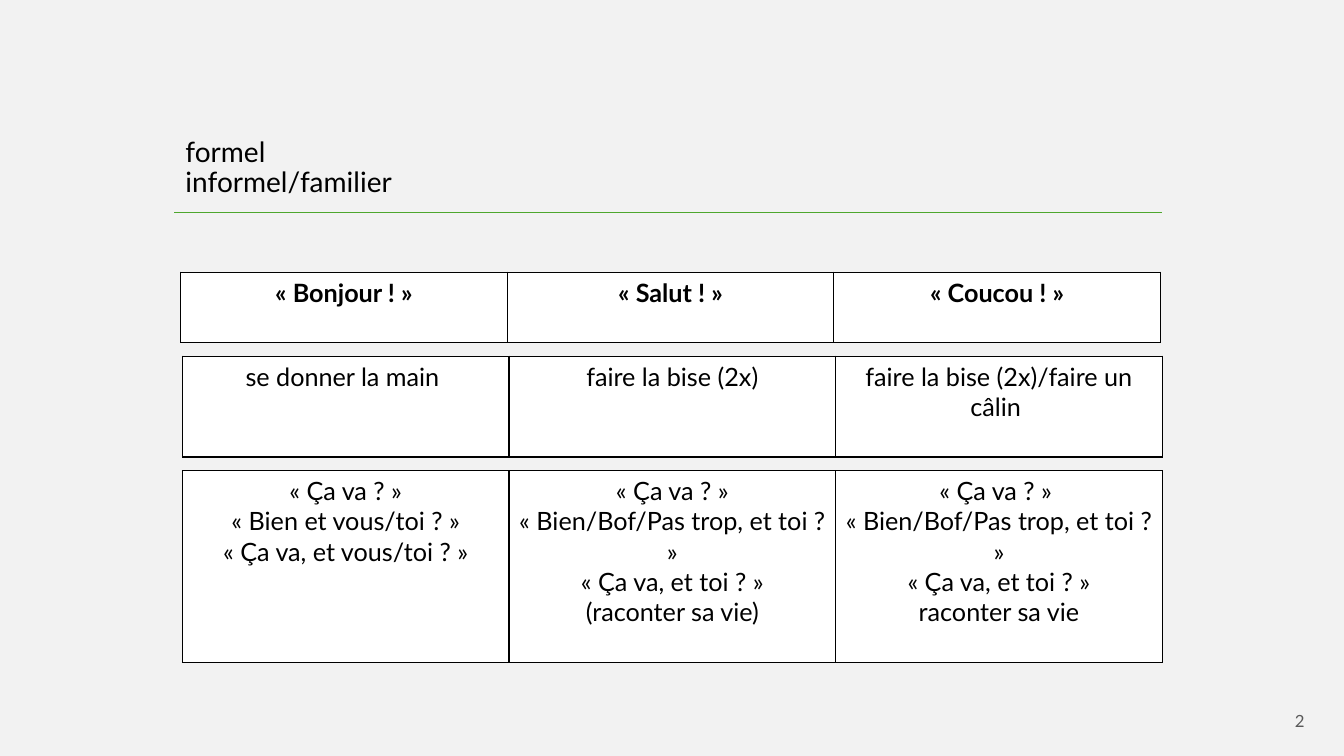
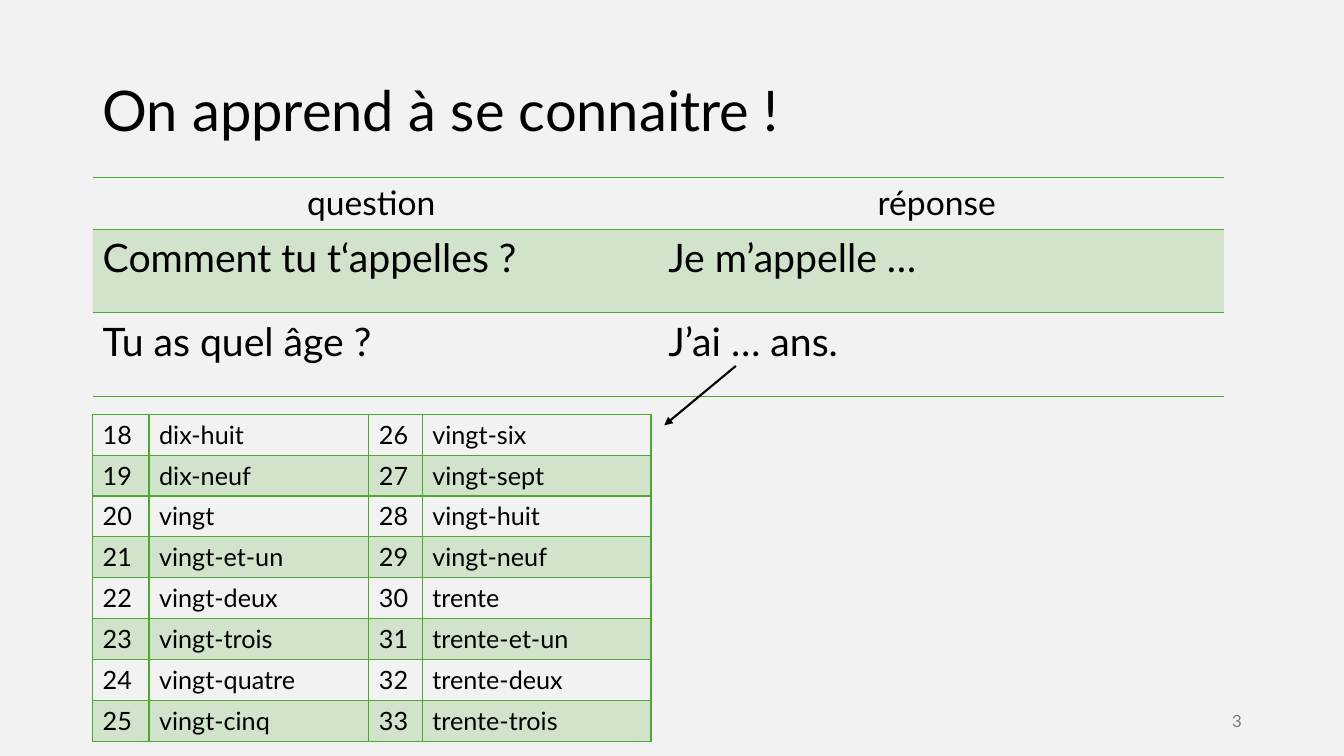
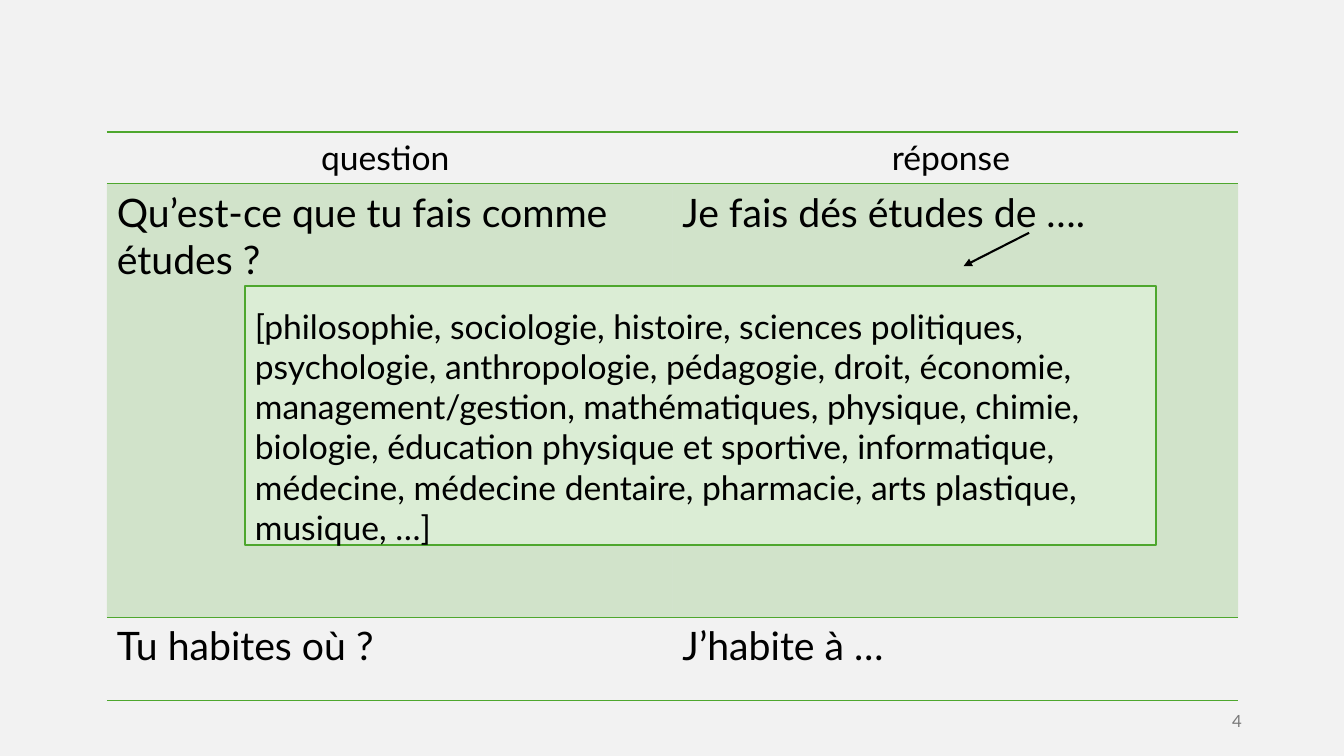
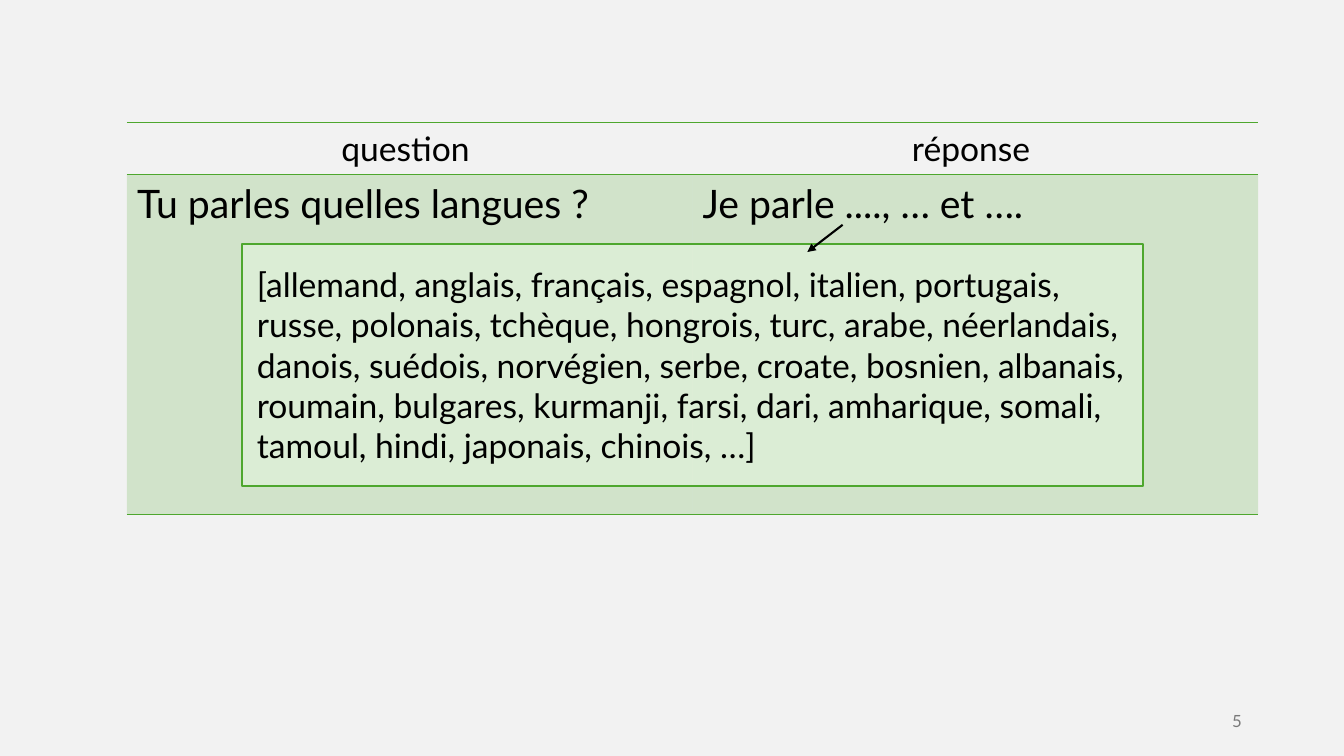
import lxml.etree
import pptx
import pptx.dml.color
import pptx.enum.shapes
import pptx.enum.text
import pptx.oxml.ns
import pptx.util

Pt = pptx.util.Pt
ALIGN = pptx.enum.text.PP_ALIGN
ANCHOR = pptx.enum.text.MSO_ANCHOR
qn = pptx.oxml.ns.qn

# Shared look
FONT = "Lato"
COLORS = {
    "background": "F2F2F2", "text": "000000", "white": "FFFFFF",
    "green": "4EA72E", "number": "797979", "dark_number": "595959",
}
NO_STYLE = "{2D5ABB26-0587-4C30-8999-92F81FD0307C}"
BAND_ALPHA = 20
QUESTION_WIDTHS = [404, 404]
HEADER_HEIGHT = 37

# Content: greetings, as (left, height, bold, cells), stacked downwards
REGISTERS = ["formel", "informel/familier"]
GREETINGS = [
    (129, 50.4, True, [["« Bonjour ! »"], ["« Salut ! »"], ["« Coucou ! »"]]),
    (130.3, 72, False, [["se donner la main "], ["faire la bise (2x)"],
                        ["faire la bise (2x)/faire un câlin "]]),
    (130.3, 137, False, [
        ["« Ça va ? »", "« Bien et vous/toi ? »", "« Ça va, et vous/toi ? »"],
        ["« Ça va ? »", "« Bien/Bof/Pas trop, et toi ? »", "« Ça va, et toi ? »",
         "(raconter sa vie)"],
        ["« Ça va ? » ", "« Bien/Bof/Pas trop, et toi ? »", "« Ça va, et toi ? »",
         "raconter sa vie"],
    ]),
]

# Content: questions, as (question, answer, row height)
HEADER = ("question ", "réponse ")
NAME_AND_AGE = [
    ("Comment tu t‘appelles ?", "Je m’appelle …", 59.8),
    ("Tu as quel âge ?", "J’ai … ans.", 59.8),
]
STUDIES_AND_HOME = [
    ("Qu’est-ce que tu fais comme études ?", "Je fais dés études de ….", 309.5),
    ("Tu habites où ?", "J’habite à …", 59.8),
]
LANGUAGES = [("Tu parles quelles langues ?", "Je parle ...., … et ….", 242.7)]

FIRST_NUMBER = 18
NUMBERS = [
    "dix-huit", "dix-neuf", "vingt", "vingt-et-un", "vingt-deux", "vingt-trois",
    "vingt-quatre", "vingt-cinq", "vingt-six", "vingt-sept", "vingt-huit",
    "vingt-neuf", "trente", "trente-et-un", "trente-deux", "trente-trois",
]
STUDY_WORDS = (
    "[philosophie, sociologie, histoire, sciences politiques, psychologie, "
    "anthropologie, pédagogie, droit, économie, management/gestion, mathématiques, "
    "physique, chimie, biologie, éducation physique et sportive, informatique, "
    "médecine, médecine dentaire, pharmacie, arts plastique, musique, …]"
)
LANGUAGE_WORDS = (
    "[allemand, anglais, français, espagnol, italien, portugais, russe, polonais, "
    "tchèque, hongrois, turc, arabe, néerlandais, danois, suédois, norvégien, serbe, "
    "croate, bosnien, albanais, roumain, bulgares, kurmanji, farsi, dari, amharique, "
    "somali, tamoul, hindi, japonais, chinois, …]"
)


# Text and drawing helpers
def rgb(name):
    return pptx.dml.color.RGBColor.from_string(COLORS[name])


def add_run(paragraph, text, size, color="text", bold=False):
    run = paragraph.add_run()
    run.text = text
    run.font.name = FONT
    run.font.size = Pt(size)
    run.font.bold = bold
    run.font.color.rgb = rgb(color)


def write_lines(frame, lines, size, align=ALIGN.LEFT, color="text", bold=False):
    for index, line in enumerate(lines):
        paragraph = frame.add_paragraph() if index else frame.paragraphs[0]
        paragraph.alignment = align
        add_run(paragraph, line, size, color, bold)


def place(shape, left, top, width, height):
    shape.left, shape.top = Pt(left), Pt(top)
    shape.width, shape.height = Pt(width), Pt(height)


def add_text(slide, box, lines, size, **style):
    frame = slide.shapes.add_textbox(*map(Pt, box)).text_frame
    frame.word_wrap = True
    write_lines(frame, lines, size, **style)
    return frame


def add_number(slide, number, left=678.2, color="number"):
    frame = add_text(slide, (left, 500.4, 216, 28.8), [str(number)], 12,
                     align=ALIGN.RIGHT, color=color)
    frame.vertical_anchor = ANCHOR.MIDDLE


def add_line(slide, start, end, color, width, arrow=False):
    line = slide.shapes.add_connector(
        pptx.enum.shapes.MSO_CONNECTOR.STRAIGHT, *map(Pt, start + end))
    line.line.color.rgb = rgb(color)
    line.line.width = Pt(width)
    properties = line._element.spPr
    if arrow:
        outline = properties.find(qn("a:ln"))
        lxml.etree.SubElement(outline, qn("a:tailEnd"), type="triangle")
    lxml.etree.SubElement(properties, qn("a:effectLst"))


def add_word_frame(slide, box):
    shape = slide.shapes.add_shape(
        pptx.enum.shapes.MSO_SHAPE.RECTANGLE, *map(Pt, box))
    shape.shadow.inherit = False
    shape.fill.solid()
    shape.fill.fore_color.rgb = rgb("white")
    shape.line.color.rgb = rgb("green")
    shape.line.width = Pt(1.5)


# Table helpers
def add_table(slide, left, top, widths, heights):
    table = slide.shapes.add_table(
        len(heights), len(widths), Pt(left), Pt(top),
        Pt(sum(widths)), Pt(sum(heights))).table
    table.first_row = table.horz_banding = False
    table._tbl.tblPr.find(qn("a:tableStyleId")).text = NO_STYLE
    for column, width in zip(table.columns, widths):
        column.width = Pt(width)
    for row, height in zip(table.rows, heights):
        row.height = Pt(height)
    return table


def set_borders(cell, sides, color):
    properties = cell._tc.get_or_add_tcPr()
    for index, side in enumerate(sides):
        border = lxml.etree.Element(qn("a:ln" + side), w=str(Pt(1)))
        fill = lxml.etree.SubElement(border, qn("a:solidFill"))
        lxml.etree.SubElement(fill, qn("a:srgbClr"), val=COLORS[color])
        properties.insert(index, border)


def fill_cell(cell, color, alpha=None):
    cell.fill.solid()
    cell.fill.fore_color.rgb = rgb(color)
    if alpha:
        tint = cell._tc.tcPr.find(".//" + qn("a:solidFill") + "[last()]")
        tint = cell._tc.tcPr.find(qn("a:solidFill")).find(qn("a:srgbClr"))
        lxml.etree.SubElement(tint, qn("a:alpha"), val=str(alpha * 1000))


def fill_band(cell, row):
    if row % 2:
        fill_cell(cell, "green", BAND_ALPHA)
    else:
        cell.fill.background()


def add_questions(slide, left, top, questions):
    heights = [HEADER_HEIGHT] + [height for _, _, height in questions]
    rows = [HEADER] + [(question, answer) for question, answer, _ in questions]
    table = add_table(slide, left, top, QUESTION_WIDTHS, heights)
    for row, texts in enumerate(rows):
        # Rules above and below the header, and under the last row
        sides = "TB" if row == 0 else "T" if row == 1 else ""
        if row == len(rows) - 1:
            sides += "B"
        for column, text in enumerate(texts):
            cell = table.cell(row, column)
            write_lines(cell.text_frame, [text], 28 if row else 24,
                        ALIGN.LEFT if row else ALIGN.CENTER)
            set_borders(cell, sides, "green")
            fill_band(cell, row)


# Slides
def build_greetings(presentation):
    slide = presentation.slides.add_slide(presentation.slide_layouts[1])
    title, body = slide.placeholders
    title._element.getparent().remove(title._element)
    place(body, 125.3, 95, 705.6, 249.8)
    body.text_frame.auto_size = pptx.enum.text.MSO_AUTO_SIZE.NONE
    paragraph = body.text_frame.paragraphs[0]
    paragraph.line_spacing = 0.9
    paragraph.space_before = Pt(10)
    properties = paragraph._p.get_or_add_pPr()
    properties.set("marL", "0")
    properties.set("indent", "0")
    lxml.etree.SubElement(properties, qn("a:buNone"))
    for index, register in enumerate(REGISTERS):
        if index:
            paragraph.add_line_break()
        add_run(paragraph, register, 20)

    add_number(slide, 2, left=722.9, color="dark_number")
    add_line(slide, (124.6, 151.9), (830.2, 151.9), "green", 1)
    top, gap = 194.4, 9.7
    for left, height, bold, cells in GREETINGS:
        table = add_table(slide, left, top, [233.3] * len(cells), [height])
        for column, lines in enumerate(cells):
            cell = table.cell(0, column)
            write_lines(cell.text_frame, lines, 18, ALIGN.CENTER, bold=bold)
            set_borders(cell, "LRTB", "text")
            fill_cell(cell, "white")
        top += height + gap


def build_name_and_age(presentation):
    slide = presentation.slides.add_slide(presentation.slide_layouts[5])
    title = slide.shapes.title
    place(title, 66.2, 28.8, 828, 104.4)
    title.text_frame.auto_size = pptx.enum.text.MSO_AUTO_SIZE.NONE
    title.text_frame.vertical_anchor = ANCHOR.MIDDLE
    write_lines(title.text_frame, ["On apprend à se connaitre !"], 40)
    title.text_frame.paragraphs[0].line_spacing = 0.9

    add_questions(slide, 66.2, 126.7, NAME_AND_AGE)
    add_number(slide, 3)
    # Numbers run down the left pair of columns, then the right pair
    row_count = len(NUMBERS) // 2
    table = add_table(slide, 66.2, 295.9, [40.3, 157, 38.2, 163.4],
                      [29.2] * row_count)
    for index, word in enumerate(NUMBERS):
        pair, row = divmod(index, row_count)
        for offset, text in enumerate((str(FIRST_NUMBER + index), word)):
            cell = table.cell(row, 2 * pair + offset)
            write_lines(cell.text_frame, [text], 18)
            set_borders(cell, "LRTB", "green")
            fill_band(cell, row)
    add_line(slide, (525.6, 261.4), (474.5, 303.8), "text", 1.5, arrow=True)


def build_word_list(presentation, number, frame_box, table_at, questions,
                    words_box, words, arrow):
    slide = presentation.slides.add_slide(presentation.slide_layouts[6])
    add_word_frame(slide, frame_box)
    add_questions(slide, *table_at, questions)
    add_number(slide, number)
    add_text(slide, words_box, [words], 24)
    add_line(slide, *arrow, "text", 1.5, arrow=True)


def main():
    presentation = pptx.Presentation()
    presentation.slide_width, presentation.slide_height = Pt(960), Pt(540)
    background = presentation.slide_master.background.fill
    background.solid()
    background.fore_color.rgb = rgb("background")

    build_greetings(presentation)
    build_name_and_age(presentation)
    build_word_list(
        presentation, 4, (175, 204.5, 651, 185), (76.3, 94.3), STUDIES_AND_HOME,
        (175, 214.6, 669.6, 174.2), STUDY_WORDS, ((735.1, 166.3), (688.3, 190.1)))
    build_word_list(
        presentation, 5, (172.8, 174.2, 643.7, 172.8), (90.7, 87.8), LANGUAGES,
        (176.4, 185, 637.2, 152.6), LANGUAGE_WORDS, ((601.9, 160.6), (576.7, 180)))
    presentation.save("out.pptx")


if __name__ == "__main__":
    main()
